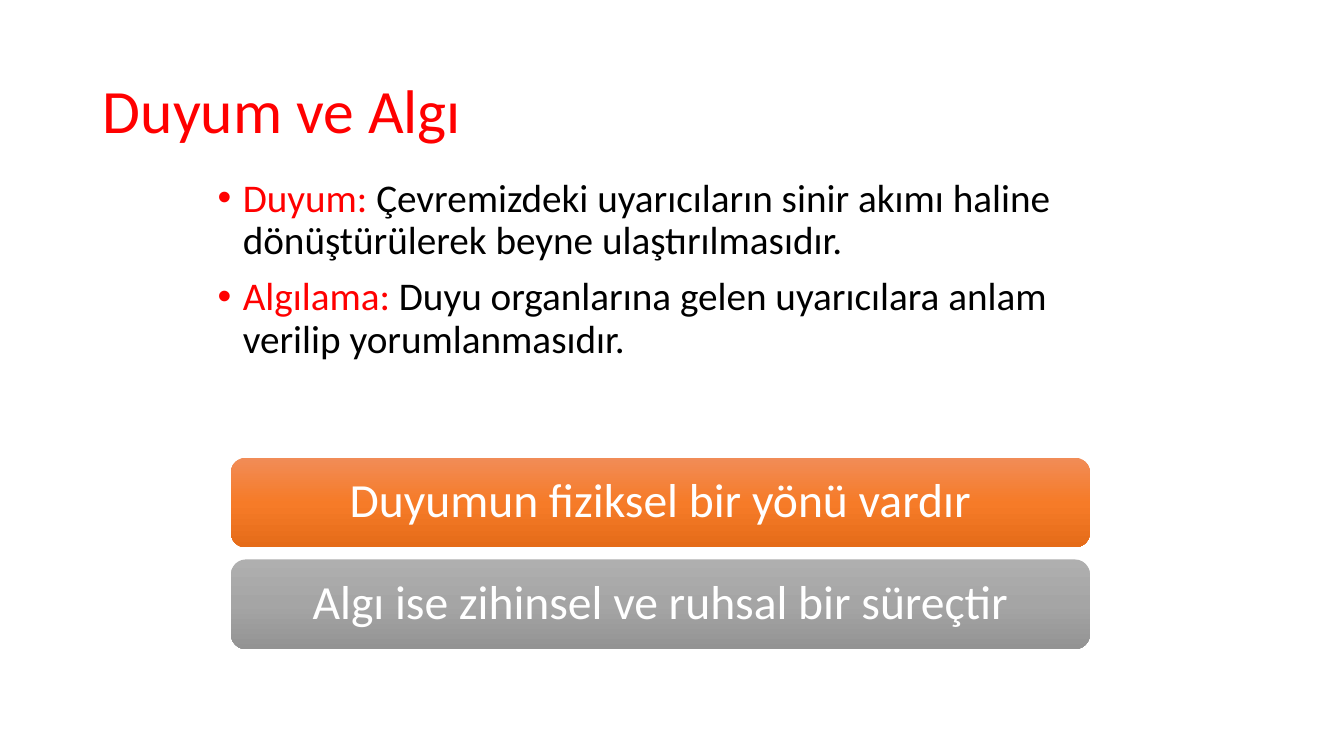
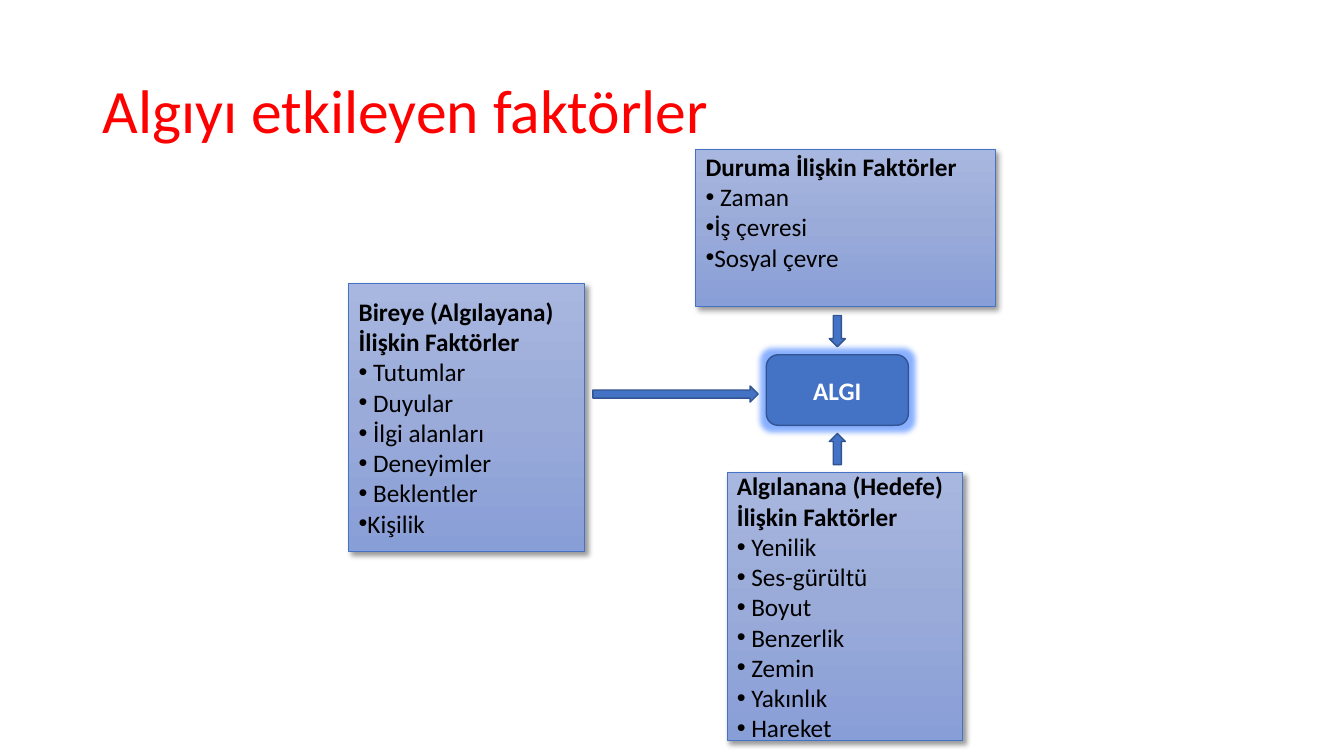
from lxml.etree import SubElement
from pptx import Presentation
from pptx.dml.color import RGBColor
from pptx.enum.shapes import MSO_SHAPE
from pptx.enum.text import MSO_ANCHOR, PP_ALIGN
from pptx.oxml.ns import qn
from pptx.util import Inches, Pt

FONT = "Calibri"
COLORS = {
    "red": "FF0000", "black": "000000", "white": "FFFFFF",
    "blue": "4472C4", "navy": "325491", "glow": "3B7CFF",
}
GRADIENTS = {
    "orange": ["F18C57", "F67B28", "E56C19"],
    "gray": ["AFAFAF", "A5A5A5", "939393"],
    "blue": ["A8B7DF", "9AABD9", "889ED7"],
}


def rgb(name):
    return RGBColor.from_string(COLORS[name])


def add_run(p, text, size, color, bold=False):
    r = p.add_run()
    r.text = text
    r.font.name, r.font.size, r.font.bold = FONT, Pt(size), bold
    r.font.color.rgb = rgb(color)


def add_bullet(p, indent=0):
    pPr = p._p.get_or_add_pPr()
    pPr.set("marL", str(Inches(indent)))
    pPr.set("indent", str(-Inches(indent)))
    SubElement(pPr, qn("a:buFont"), typeface="Arial")
    SubElement(pPr, qn("a:buChar"), char="•")


def next_paragraph(tf, i):
    return tf.add_paragraph() if i else tf.paragraphs[0]


def add_box(s, kind, box, line=None, width=1):
    sp = s.shapes.add_shape(kind, *map(Inches, box))
    sp.shadow.inherit = False
    if line:
        sp.line.color.rgb = rgb(line)
        sp.line.width = Pt(width)
    else:
        sp.line.fill.background()
    sp.text_frame.word_wrap = True
    sp.text_frame.vertical_anchor = MSO_ANCHOR.MIDDLE
    return sp


def fill_solid(sp, color):
    sp.fill.solid()
    sp.fill.fore_color.rgb = rgb(color)


def fill_gradient(sp, name):
    """Even colour stops running from top to bottom."""
    sp.fill.gradient()
    sp.fill.gradient_angle = 270
    stops = sp.element.spPr.find(qn("a:gradFill")).find(qn("a:gsLst"))
    for gs in list(stops):
        stops.remove(gs)
    for i, color in enumerate(GRADIENTS[name]):
        gs = SubElement(stops, qn("a:gs"), pos=str(i * 50000))
        SubElement(gs, qn("a:srgbClr"), val=color)


def add_effect(sp, tag, color, alpha, **attrs):
    effects = sp.element.spPr.find(qn("a:effectLst"))
    effect = SubElement(effects, qn(tag), **{k: str(v) for k, v in attrs.items()})
    clr = SubElement(effect, qn("a:srgbClr"), val=COLORS[color])
    SubElement(clr, qn("a:alpha"), val=str(alpha * 1000))


def add_title_slide(prs, title):
    s = prs.slides.add_slide(prs.slide_layouts[5])
    sp = s.shapes.title
    sp.left, sp.top, sp.width, sp.height = map(Inches, (0.92, 0.4, 11.5, 1.45))
    sp.text_frame.vertical_anchor = MSO_ANCHOR.MIDDLE
    p = sp.text_frame.paragraphs[0]
    p.alignment, p.line_spacing = PP_ALIGN.LEFT, 0.9
    add_run(p, title, 44, "red")
    return s


def add_definitions(s, box, definitions):
    tf = s.shapes.add_textbox(*map(Inches, box)).text_frame
    tf.word_wrap = True
    for i, (term, meaning) in enumerate(definitions):
        p = next_paragraph(tf, i)
        p.line_spacing, p.space_before = 0.9, Pt(10)
        add_bullet(p, 0.25)
        add_run(p, term + " ", 28, "red")
        add_run(p, meaning, 28, "black")


def add_banners(s, box, banners, gap=0.12):
    x, y, w, h = box
    bar_h = (h - gap * (len(banners) - 1)) / len(banners)
    for i, (text, gradient) in enumerate(banners):
        sp = add_box(s, MSO_SHAPE.ROUNDED_RECTANGLE,
                     (x, y + i * (bar_h + gap), w, bar_h))
        fill_gradient(sp, gradient)
        p = sp.text_frame.paragraphs[0]
        p.alignment, p.line_spacing = PP_ALIGN.CENTER, 0.9
        add_run(p, text, 34, "white")


def add_factor_card(s, box, heading, factors, anchor=MSO_ANCHOR.MIDDLE):
    sp = add_box(s, MSO_SHAPE.RECTANGLE, box, "blue", 0.5)
    fill_gradient(sp, "blue")
    add_effect(sp, "a:outerShdw", "black", 40, blurRad=Pt(4), dist=Pt(3),
               dir=45 * 60000, algn="tl", rotWithShape=0)
    tf = sp.text_frame
    tf.vertical_anchor = anchor
    if anchor == MSO_ANCHOR.TOP:
        tf.margin_top = Inches(0.02)
    for i, text in enumerate([heading] + factors):
        p = next_paragraph(tf, i)
        p.alignment = PP_ALIGN.LEFT
        if i:
            add_bullet(p)
        add_run(p, text, 18, "black", bold=i == 0)


def add_hub(s, box, text, source_right):
    """Central box with arrows from above, below and the left."""
    x, y, w, h = box
    thick, length, gap = 0.16, 0.31, 0.08
    sp = add_box(s, MSO_SHAPE.ROUNDED_RECTANGLE, box, "navy")
    fill_solid(sp, "blue")
    add_effect(sp, "a:glow", "glow", 60, rad=Pt(8))
    p = sp.text_frame.paragraphs[0]
    p.alignment = PP_ALIGN.CENTER
    add_run(p, text, 18, "white", bold=True)

    mid_x = x + (w - thick) / 2
    start = source_right + gap
    arrows = [
        (MSO_SHAPE.UP_ARROW, (mid_x, y + h + gap, thick, length)),
        (MSO_SHAPE.DOWN_ARROW, (mid_x, y - gap - length, thick, length)),
        (MSO_SHAPE.RIGHT_ARROW, (start, y + length, x - gap - start, thick)),
    ]
    for kind, arrow_box in arrows:
        fill_solid(add_box(s, kind, arrow_box, "navy"), "blue")


def build_definition_slide(prs):
    s = add_title_slide(prs, "Duyum ve Algı")
    add_definitions(s, (2.06, 1.72, 9, 2.2), [
        ("Duyum:", "Çevremizdeki uyarıcıların sinir akımı haline "
                   "dönüştürülerek beyne ulaştırılmasıdır."),
        ("Algılama:", "Duyu organlarına gelen uyarıcılara anlam verilip "
                      "yorumlanmasıdır."),
    ])
    add_banners(s, (2.29, 4.54, 8.52, 1.9), [
        ("Duyumun fiziksel bir yönü vardır", "orange"),
        ("Algı ise zihinsel ve ruhsal bir süreçtir", "gray"),
    ])


def build_factor_slide(prs):
    s = add_title_slide(prs, "Algıyı etkileyen faktörler")
    # Factor cards
    add_factor_card(s, (3.46, 2.81, 2.34, 2.66),
                    "Bireye (Algılayana) İlişkin Faktörler",
                    [" Tutumlar", " Duyular", " İlgi alanları",
                     " Deneyimler", " Beklentler", "Kişilik"])
    add_factor_card(s, (6.9, 1.48, 2.97, 1.56), "Duruma İlişkin Faktörler",
                    [" Zaman", "İş çevresi", "Sosyal çevre"], MSO_ANCHOR.TOP)
    add_factor_card(s, (7.21, 4.69, 2.34, 2.66),
                    "Algılanana (Hedefe) İlişkin Faktörler",
                    [" Yenilik", " Ses-gürültü", " Boyut", " Benzerlik",
                     " Zemin", " Yakınlık", " Hareket"])
    # Hub and arrows
    add_hub(s, (7.6, 3.52, 1.41, 0.7), "ALGI", source_right=5.8)


def main():
    prs = Presentation()
    prs.slide_width, prs.slide_height = Inches(13.33), Inches(7.5)
    build_definition_slide(prs)
    build_factor_slide(prs)
    prs.save("out.pptx")


if __name__ == "__main__":
    main()
